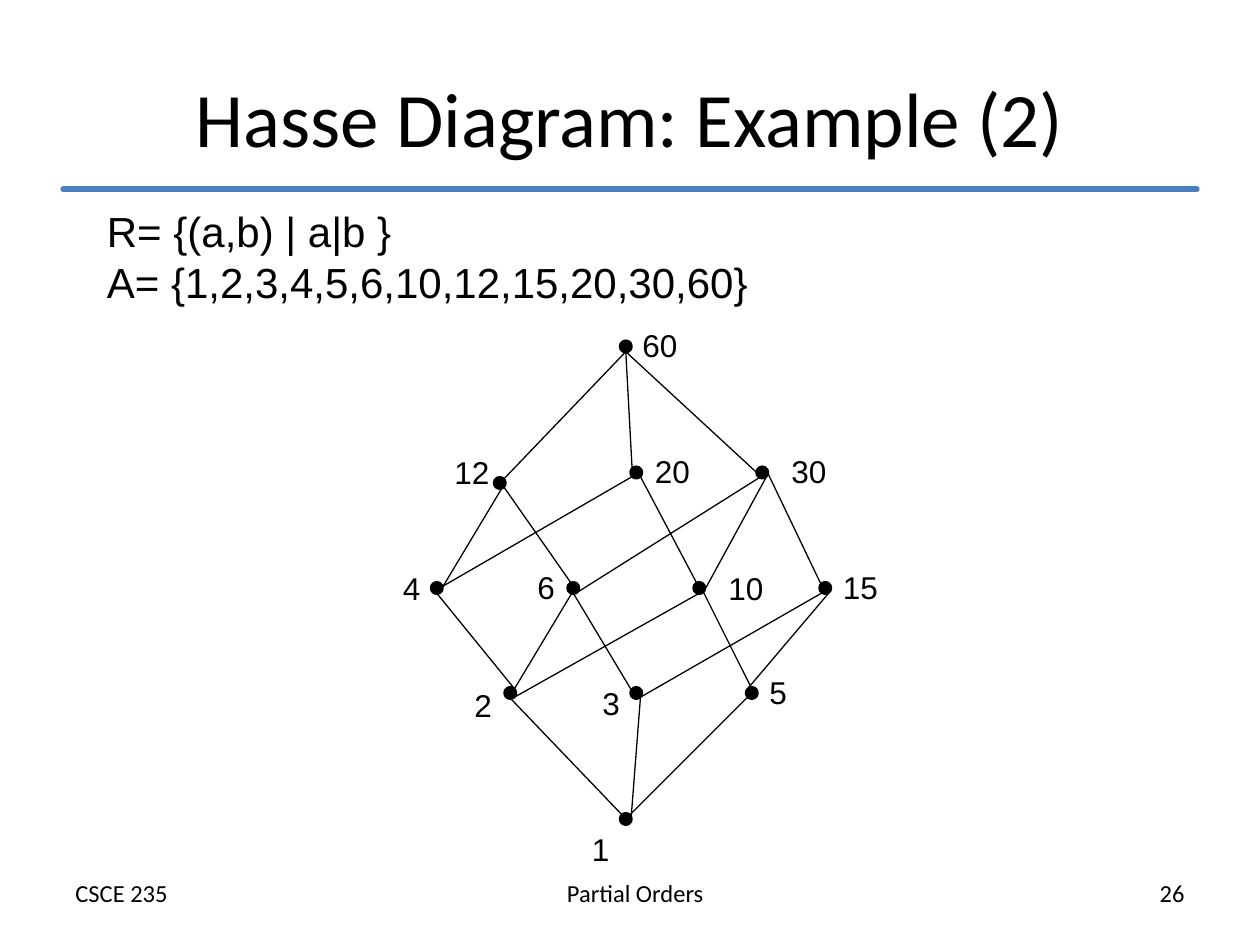
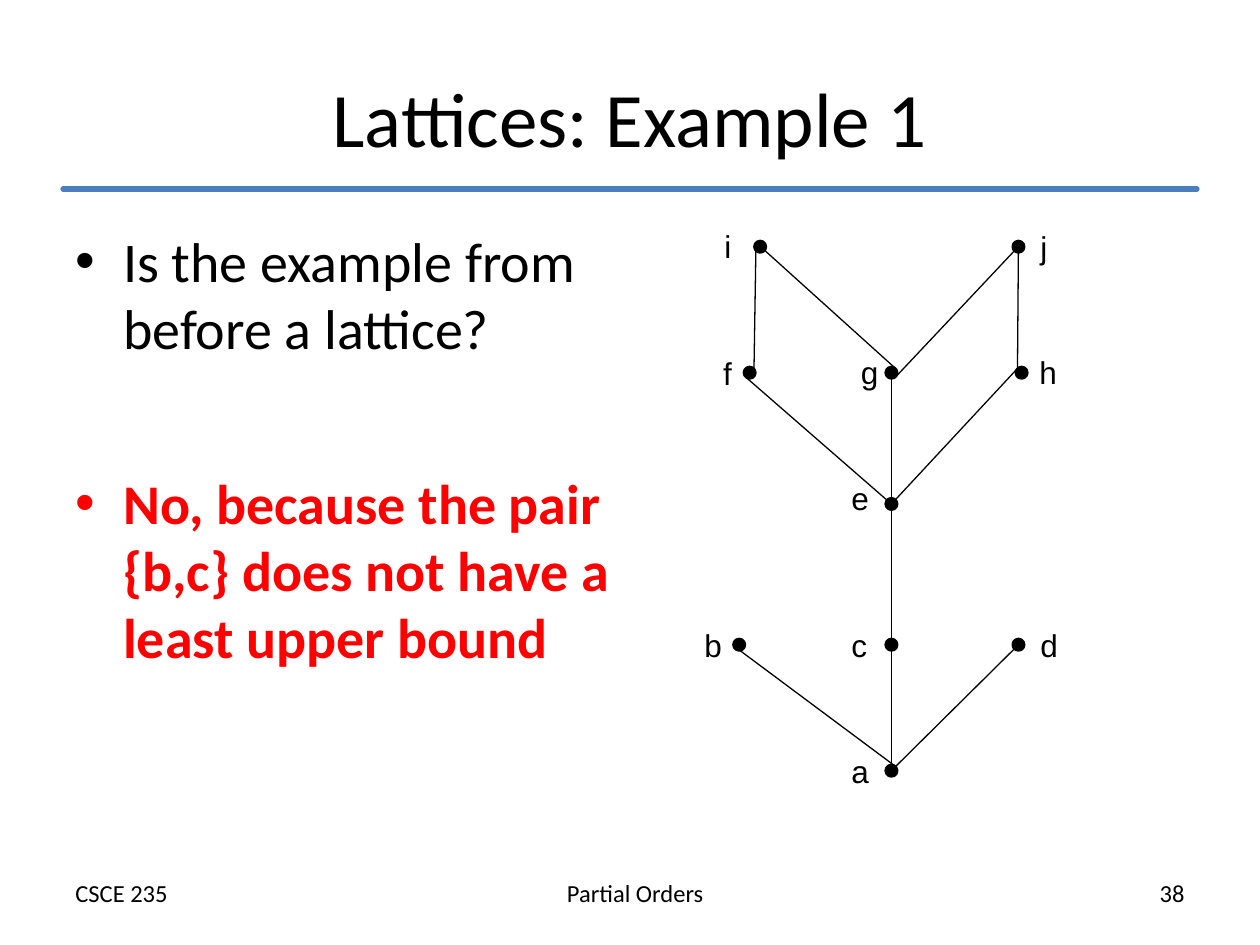
from pptx import Presentation
from pptx.dml.color import RGBColor
from pptx.enum.shapes import MSO_CONNECTOR as Link, MSO_SHAPE as Kind
from pptx.enum.text import MSO_ANCHOR as Anchor, PP_ALIGN as Align
from pptx.oxml.ns import qn
from pptx.util import Inches, Pt
from lxml.etree import SubElement as Sub

CELL = Inches(10) / 120  # the slide is 120 columns by 90 rows
COLS, ROWS = 120, 90
BLACK, BLUE, RED = "000000", "4B7EBC", "FF0000"
TAG = dict(name="Arial", size=Pt(18))
SET = dict(name="Arial", size=Pt(24))
FOOT = dict(name="Calibri", size=Pt(14))
HEAD = dict(name="Calibri", size=Pt(44))
ASK = dict(name="Calibri", size=Pt(32))
DOT = 1  # dot width in cells
RIM = {"C": (0, 0), "N": (0, -.5), "S": (0, .5), "E": (.5, 0),
       "NE": (.4, -.4), "NW": (-.4, -.4), "SE": (.4, .4), "SW": (-.4, .4)}

# name: dot column, dot row, label column, label row
DIVS = {
    "60": (59.6, 33, 60, 30.5),
    "12": (47.6, 46, 42.1, 42.6), "20": (60.6, 45, 61.2, 42.5),
    "30": (72.6, 45, 74.2, 42.5),
    "4": (41.6, 56, 37.2, 53.6), "6": (54.6, 56, 50, 53.5),
    "10": (66.6, 56, 68.2, 53.6), "15": (78.6, 56, 79.1, 53.5),
    "2": (48.6, 66, 44, 64.7), "3": (60.6, 66, 56.2, 64.6),
    "5": (71.6, 66, 72.1, 63.5),
    "1": (59.6, 78, 55.2, 78.5)}
# lower dot, side, upper dot, side
DIV_LINKS = """1 SE 2 S, 1 E 3 SE, 1 NE 5 SW, 2 NE 4 S, 2 NE 6 NE, 2 SE 10 S,
    3 S 6 S, 3 SE 15 E, 5 NW 15 SE, 5 SE 10 SE, 4 E 12 E, 4 SW 20 SW,
    6 SE 12 SE, 6 SE 30 E, 10 C 20 SE, 10 SE 30 SE, 15 S 30 E,
    12 NE 60 S, 20 NW 60 S, 30 S 60 S"""
POSET = {
    "i": (72.4, 23.5, 67.8, 21), "j": (97, 23.5, 97.9, 21.1),
    "f": (71.4, 35.5, 67.7, 33.1), "g": (84.9, 35.5, 80.8, 33),
    "h": (97.3, 35.5, 97.8, 33), "e": (84.9, 48, 79.9, 45),
    "b": (70.4, 61.4, 65.9, 59), "c": (84.9, 61.4, 79.9, 59),
    "d": (97, 61.4, 97.9, 59), "a": (84.9, 73.4, 79.9, 71)}
POSET_LINKS = """a NE b S, a N c N, a NE d SW, c N e C, e C f SW, e S g S,
    e C h NW, f SE i NW, g NE i NW, g SE j SW, h SW j N"""


def write(slide, box, lines, style, color=BLACK, align=Align.LEFT,
          anchor=Anchor.TOP, wrap=True, bullet=False):
    frame = slide.shapes.add_textbox(*(round(v * CELL) for v in box)).text_frame
    frame.word_wrap, frame.vertical_anchor = wrap, anchor
    frame.text = "\n".join(lines)
    for para in frame.paragraphs:
        para.alignment = align
        font = para.runs[0].font
        font.color.rgb = RGBColor.from_string(color)
        for key, val in style.items():
            setattr(font, key, val)
        if bullet:
            para.space_before = Pt(6.4)
            props = para._p.get_or_add_pPr()
            props.set("marL", str(Inches(.38)))
            props.set("indent", str(-Inches(.38)))
            Sub(props, qn("a:buFont")).set("typeface", "Arial")
            Sub(props, qn("a:buChar")).set("char", "•")


def rule(slide, start, end, color, width):
    """Draw a straight line between two grid points."""
    ends = [round(v * CELL) for v in (*start, *end)]
    line = slide.shapes.add_connector(Link.STRAIGHT, *ends)
    line.line.color.rgb = RGBColor.from_string(color)
    line.line.width = Pt(width)
    Sub(line._element.spPr, qn("a:effectLst"))
    return line


deck = Presentation()
deck.slide_width, deck.slide_height = round(COLS * CELL), round(ROWS * CELL)

slides = []
for title, page, nodes, links in (
        ("Hasse Diagram: Example (2)", "26", DIVS, DIV_LINKS),
        ("Lattices: Example 1", "38", POSET, POSET_LINKS)):
    slide = deck.slides.add_slide(deck.slide_layouts[6])
    slides.append(slide)

    for col, words, align in ((43, "Partial Orders", Align.CENTER),
                              (6, "CSCE 235", Align.LEFT),
                              (79, page, Align.RIGHT)):
        write(slide, (col, 83, 35, 4), [words], FOOT, align=align)
    bar = rule(slide, (6, 18), (COLS - 6, 18), BLUE, 3)
    bar.line._get_or_add_ln().set("cap", "rnd")
    write(slide, (6, 3.6, 108, 15), [title], HEAD,
          align=Align.CENTER, anchor=Anchor.MIDDLE)

    for name, (col, row, left, top) in nodes.items():
        box = (col - DOT / 2, row - DOT / 2, DOT, DOT)
        dot = slide.shapes.add_shape(Kind.OVAL, *(round(v * CELL) for v in box))
        dot.shadow.inherit = False
        dot.fill.solid()
        for paint in (dot.fill.fore_color, dot.line.color):
            paint.rgb = RGBColor.from_string(BLACK)
        dot.line.width = Pt(2)
        wide = 3.1 if name in "fij" else 2.4 + 1.7 * len(name)
        write(slide, (left, top, wide, 4.8), [name], TAG, wrap=False)

    for link in links.split(","):
        low, side, high, edge = link.split()
        start, end = ([n + d for n, d in zip(nodes[name], RIM[at])]
                      for name, at in ((low, side), (high, edge)))
        rule(slide, start, end, BLACK, .75)

hasse, lattice = slides
write(hasse, (9, 19, 98, 14.5),
      ["R= {(a,b) | a|b }", "A= {1,2,3,4,5,6,10,12,15,20,30,60}"], SET)
write(lattice, (6, 21, 55, 18),
      ["Is the example from before a lattice?"], ASK, bullet=True)
write(lattice, (6, 44, 55, 18),
      ["No, because the pair {b,c} does not have a least upper bound"],
      ASK | dict(bold=True), RED, bullet=True)

deck.save("out.pptx")
